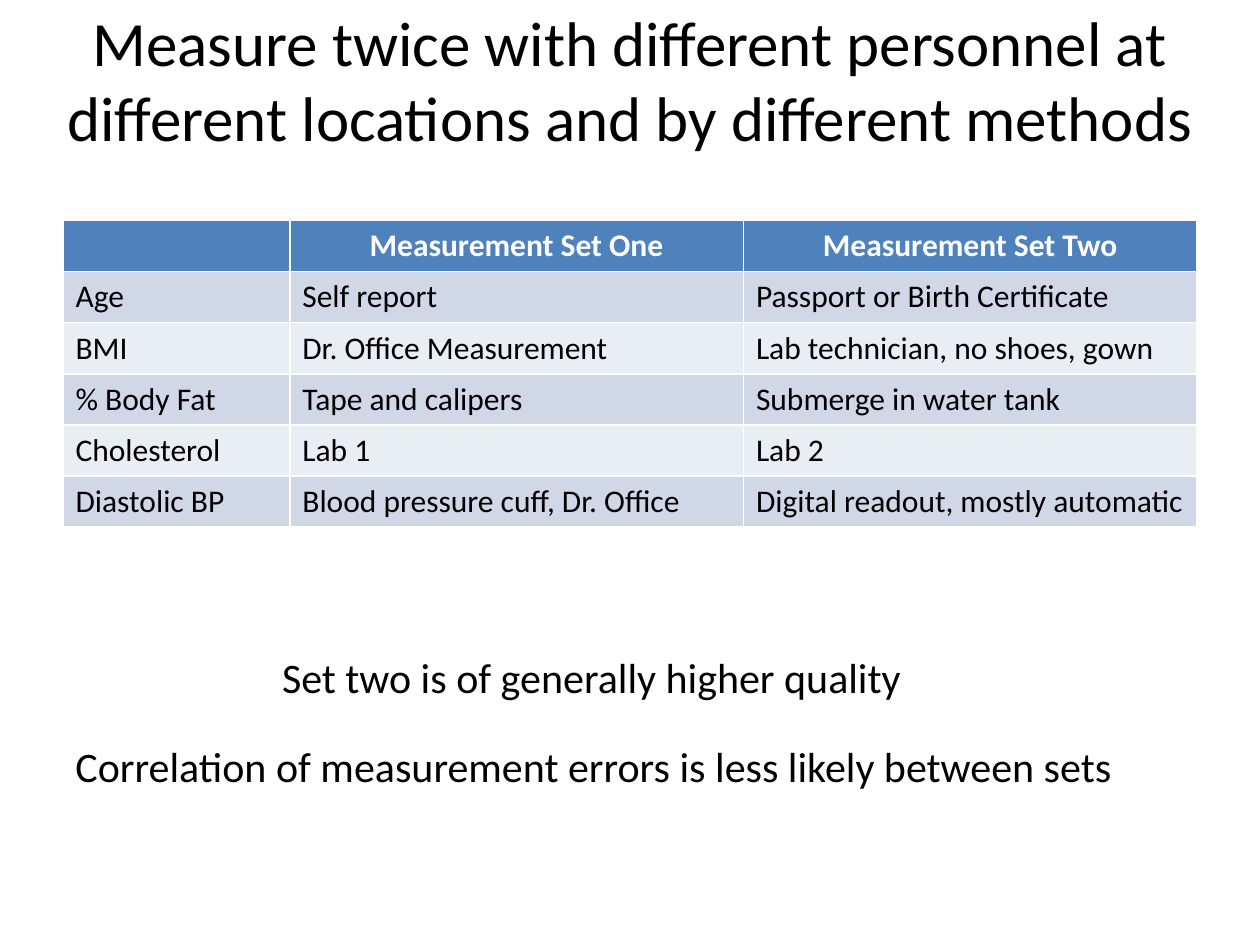
from dataclasses import dataclass

from pptx import Presentation
from pptx.dml.color import RGBColor
from pptx.enum.text import MSO_ANCHOR as Anchor, MSO_AUTO_SIZE as AutoSize, PP_ALIGN as Align
from pptx.util import Inches, Pt

COLUMNS, ROWS = 40, 30  # grid of quarter-inch cells

MEASUREMENTS = [
    ("", "Measurement Set One", "Measurement Set Two"),
    ("Age", "Self report", "Passport or Birth Certificate"),
    ("BMI", "Dr. Office Measurement", "Lab technician, no shoes, gown"),
    ("% Body Fat", "Tape and calipers", "Submerge in water tank"),
    ("Cholesterol", "Lab 1", "Lab 2"),
    ("Diastolic BP", "Blood pressure cuff, Dr. Office", "Digital readout, mostly automatic"),
]


@dataclass(frozen=True)
class Theme:
    font: str = "Calibri"
    text: str = "000000"
    header_text: str = "FFFFFF"
    header_fill: str = "4F81BD"
    bands: tuple = ("D0D8E8", "E9EDF4")
    title_size: int = 36
    note_size: int = 24
    table_size: int = 18


def write_text(frame, text, *, font, size, color, bold=False, align=Align.LEFT):
    paragraph = frame.paragraphs[0]
    paragraph.alignment = align
    paragraph.font.size = Pt(size)
    if not text:
        return
    run = paragraph.add_run()
    run.text = text
    run.font.name = font
    run.font.size = Pt(size)
    run.font.bold = bold
    run.font.color.rgb = RGBColor.from_string(color)


class SlideBuilder:
    def __init__(self, presentation, theme):
        self.theme = theme
        self.cell_width = presentation.slide_width / COLUMNS
        self.cell_height = presentation.slide_height / ROWS
        self.slide = presentation.slides.add_slide(presentation.slide_layouts[5])

    def place(self, column, row, width, height):
        """Turn grid units into left, top, width and height."""
        return (round(column * self.cell_width), round(row * self.cell_height),
                round(width * self.cell_width), round(height * self.cell_height))

    def title(self, text, *area):
        shape = self.slide.shapes.title
        shape.left, shape.top, shape.width, shape.height = self.place(*area)
        frame = shape.text_frame
        frame.vertical_anchor = Anchor.MIDDLE
        frame.auto_size = AutoSize.NONE
        write_text(frame, text, font=self.theme.font, size=self.theme.title_size,
                   color=self.theme.text, align=Align.CENTER)

    def table(self, rows, shares, *area):
        """Add a banded table whose column widths follow the given shares."""
        left, top, width, height = self.place(*area)
        table = self.slide.shapes.add_table(
            len(rows), len(shares), left, top, width, height).table
        for column, share in zip(table.columns, shares):
            column.width = round(width * share / sum(shares))
        for row_index, row in enumerate(rows):
            is_header = row_index == 0
            fill = self.theme.header_fill if is_header else self.theme.bands[(row_index - 1) % 2]
            for column_index, text in enumerate(row):
                cell = table.cell(row_index, column_index)
                cell.fill.solid()
                cell.fill.fore_color.rgb = RGBColor.from_string(fill)
                write_text(cell.text_frame, text, font=self.theme.font,
                           size=self.theme.table_size, bold=is_header,
                           color=self.theme.header_text if is_header else self.theme.text,
                           align=Align.CENTER if is_header else Align.LEFT)

    def note(self, text, *area):
        frame = self.slide.shapes.add_textbox(*self.place(*area)).text_frame
        frame.word_wrap = False
        frame.auto_size = AutoSize.SHAPE_TO_FIT_TEXT
        write_text(frame, text, font=self.theme.font, size=self.theme.note_size,
                   color=self.theme.text)


def main():
    presentation = Presentation()
    presentation.slide_width, presentation.slide_height = Inches(10), Inches(7.5)
    builder = SlideBuilder(presentation, Theme())
    builder.title("Measure twice with different personnel at different locations "
                  "and by different methods", 0, 0, 40, 5)
    builder.table(MEASUREMENTS, (1, 2, 2), 2, 7, 36, 9.73)
    builder.note("Set two is of generally higher quality", 8.56, 20.48, 20.68, 2)
    builder.note("Correlation of measurement errors is less likely between sets",
                 2, 23.32, 34.36, 2)
    presentation.save("out.pptx")


if __name__ == "__main__":
    main()
